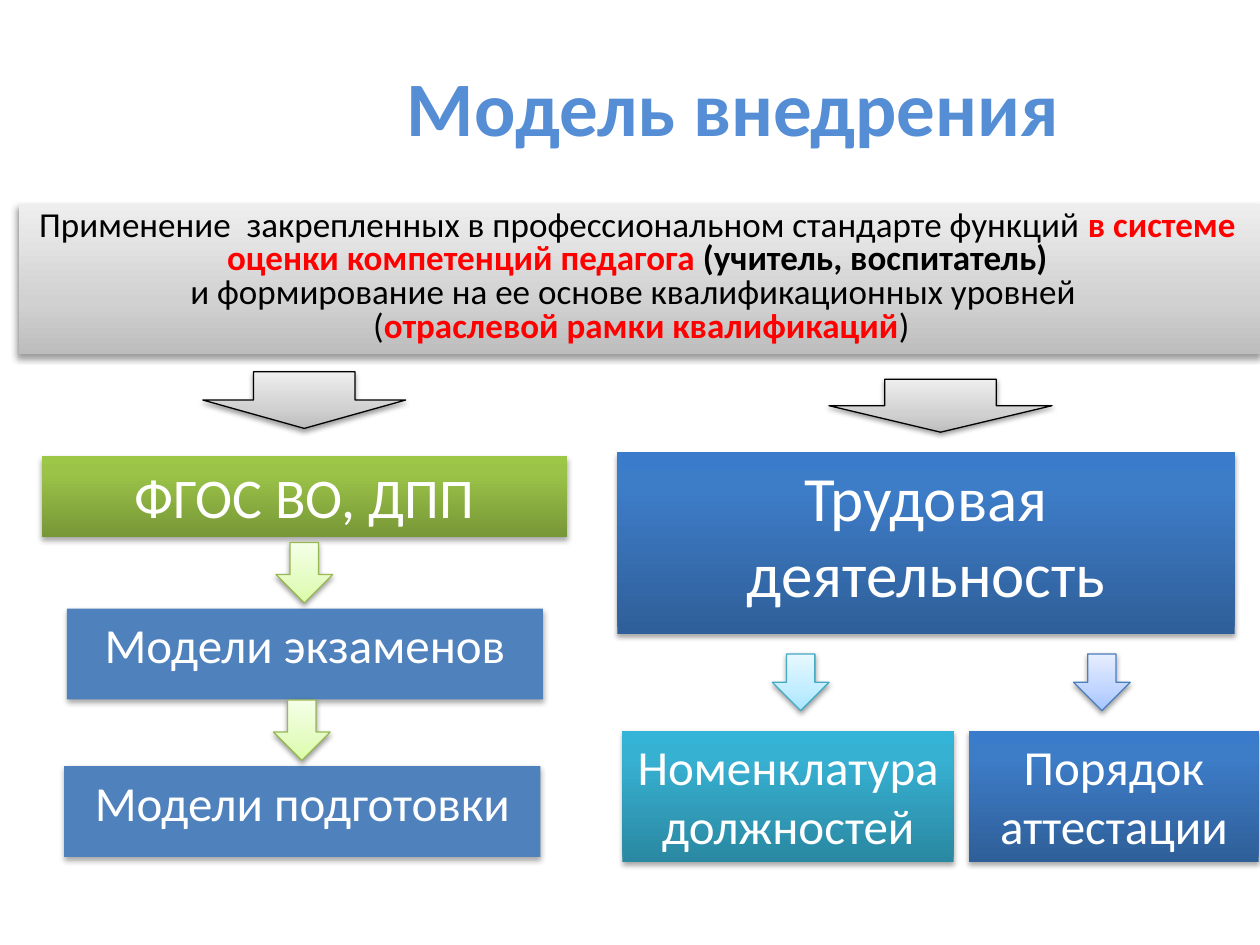
from copy import deepcopy
from lxml import etree
from pptx import Presentation
from pptx.dml.color import RGBColor
from pptx.enum.shapes import MSO_SHAPE
from pptx.enum.text import MSO_ANCHOR, MSO_AUTO_SIZE, PP_ALIGN
from pptx.oxml.ns import qn
from pptx.util import Inches, Pt

RECT, ARROW = MSO_SHAPE.RECTANGLE, MSO_SHAPE.DOWN_ARROW
CENTER, MIDDLE = PP_ALIGN.CENTER, MSO_ANCHOR.MIDDLE
GROW = MSO_AUTO_SIZE.SHAPE_TO_FIT_TEXT

FONT = "Calibri"
BLACK, WHITE, RED = "000000", "FFFFFF", "FF0000"
TITLE, STEEL = "558ED5", "4F81BD"
# Gradients run from bottom to top: (position, colour)
GREY = [(0, "BDBDBD"), (0.35, "D1D1D1"), (1, "EEEEEE")]
GREEN = [(0, "779737"), (0.8, "9BC348"), (1, "9DC746")]
BLUE = [(0, "2F5F99"), (0.8, "3D7CC7"), (1, "3A7CCB")]
TEAL = [(0, "2A88A2"), (0.8, "37B1D2"), (1, "34B4D6")]
LIME = [(0, "DAFDA7"), (0.35, "E4FCC2"), (1, "F5FFE7")]
SKY = [(0, "A7E6FF"), (0.35, "C1EDFF"), (1, "E7F8FF")]
PALE = [(0, "A4C4FF"), (0.35, "BFD4FF"), (1, "E6EEFF")]
# Shadows: opacity %, blur pt, distance pt, angle
SIDE, BELOW, SOFT = (40, 4, 3, 135), (35, 3.1, 1.8, 90), (38, 3.1, 1.6, 90)

# The slide is a grid of 100 columns by 75 rows
COLS, ROWS = 100, 75
WIDTH, HEIGHT = Inches(10), Inches(7.5)


def rgb(code):
    return RGBColor.from_string(code)


def place(box):
    x, y, w, h = box
    return [round(n) for n in (x * WIDTH / COLS, y * HEIGHT / ROWS,
                               w * WIDTH / COLS, h * HEIGHT / ROWS)]


def inner(box, x, y, w, h):
    """Shift a part to the corner of its region."""
    return box[0] + x, box[1] + y, w, h


def paint(shape, fill):
    if isinstance(fill, str):
        shape.fill.solid()
        shape.fill.fore_color.rgb = rgb(fill)
        return
    shape.fill.gradient()
    shape.fill.gradient_angle = 90
    stops = shape._element.spPr.find(".//" + qn("a:gsLst"))
    stops.append(deepcopy(stops[0]))
    for stop, (pos, code) in zip(shape.fill.gradient_stops, fill):
        stop.position = pos
        stop.color.rgb = rgb(code)


def shade(shape, look):
    alpha, blur, dist, angle = look
    shape.shadow.inherit = False
    effects = shape._element.spPr.find(qn("a:effectLst"))
    outer = etree.SubElement(
        effects, qn("a:outerShdw"), blurRad=str(Pt(blur)), dist=str(Pt(dist)),
        dir=str(angle * 60000), rotWithShape="0")
    color = etree.SubElement(outer, qn("a:srgbClr"), val=BLACK)
    etree.SubElement(color, qn("a:alpha"), val=str(alpha * 1000))


def style(par, size, color, bold=False):
    par.alignment = CENTER
    font = par.font
    font.name, font.size, font.bold = FONT, Pt(size), bold
    font.color.rgb = rgb(color)


def block(slide, box, fill, text="", size=28, look=BELOW):
    shape = slide.shapes.add_shape(RECT, *place(box))
    paint(shape, fill)
    shape.line.fill.background()
    shade(shape, look)
    frame = shape.text_frame
    frame.word_wrap, frame.auto_size = True, GROW
    frame.vertical_anchor = MSO_ANCHOR.TOP
    if text:
        frame.text = text
        style(frame.paragraphs[0], size, WHITE)
    return frame


def arrow(slide, box, fill, edge):
    shape = slide.shapes.add_shape(ARROW, *place(box))
    paint(shape, fill)
    shape.line.color.rgb = rgb(edge)
    shape.line.width = Pt(0.75)
    shade(shape, SOFT)


def title(slide, box):
    frame = slide.shapes.add_textbox(*place(box)).text_frame
    frame.word_wrap, frame.vertical_anchor = True, MIDDLE
    frame.text = "Модель внедрения"
    style(frame.paragraphs[0], 44, TITLE, True)


def banner(slide, box):
    lines = [
        [("Применение  закрепленных в профессиональном стандарте функций ",
          BLACK, False), ("в системе ", RED, True)],
        [("оценки компетенций педагога ", RED, True),
         ("(учитель, воспитатель) ", BLACK, True)],
        [("и формирование на ее основе квалификационных уровней  ",
          BLACK, False)],
        [("(", BLACK, False), ("отраслевой рамки квалификаций", RED, True),
         (")", BLACK, False)],
    ]
    frame = block(slide, box, GREY, look=SIDE)
    for i, line in enumerate(lines):
        par = frame.add_paragraph() if i else frame.paragraphs[0]
        style(par, 20, BLACK)
        par.line_spacing = 0.8
        for text, color, bold in line:
            run = par.add_run()
            run.text = text
            run.font.bold = bold
            run.font.color.rgb = rgb(color)


def study(slide, box):
    """Left branch: a chain of three blocks."""
    arrow(slide, inner(box, 12.8, 0, 16.1, 4.5), GREY, BLACK)
    block(slide, inner(box, 0, 6.7, 41.7, 6.4), GREEN, "ФГОС ВО, ДПП", 32)
    steps = [("Модели экзаменов", 2, 18.8), ("Модели подготовки", 1.8, 31.3)]
    for text, x, y in steps:
        block(slide, inner(box, x, y, 37.8, 7.2), STEEL, text)
        arrow(slide, inner(box, x + 16.6, y - 5.25, 4.5, 4.8), LIME, "98B955")


def work(slide, box):
    """Right branch: one block that splits in two."""
    arrow(slide, inner(box, 16.8, 0, 17.7, 4.2), GREY, BLACK)
    block(slide, inner(box, 0, 5.8, 49, 14.4), BLUE,
          "Трудовая деятельность", 36)
    leaves = [("Номенклатура должностей", 0.4, 26.3, TEAL, 12.3, SKY, "46AAC5"),
              ("Порядок аттестации", 27.9, 23, BLUE, 36.2, PALE, "4B7EBC")]
    for text, x, wide, fill, tip, tint, edge in leaves:
        arrow(slide, inner(box, tip, 21.8, 4.5, 4.5), tint, edge)
        block(slide, inner(box, x, 27.9, wide, 10.4), fill, text)


def main():
    deck = Presentation()
    deck.slide_width, deck.slide_height = WIDTH, HEIGHT
    slide = deck.slides.add_slide(deck.slide_layouts[6])
    title(slide, (16.4, 2.1, 83.6, 12.5))
    banner(slide, (1.5, 16.2, 98.8, 11.9))
    study(slide, (3.3, 29.5, 41.7, 38.5))
    work(slide, (49, 30.1, 50.9, 38.3))
    deck.save("out.pptx")


if __name__ == "__main__":
    main()
